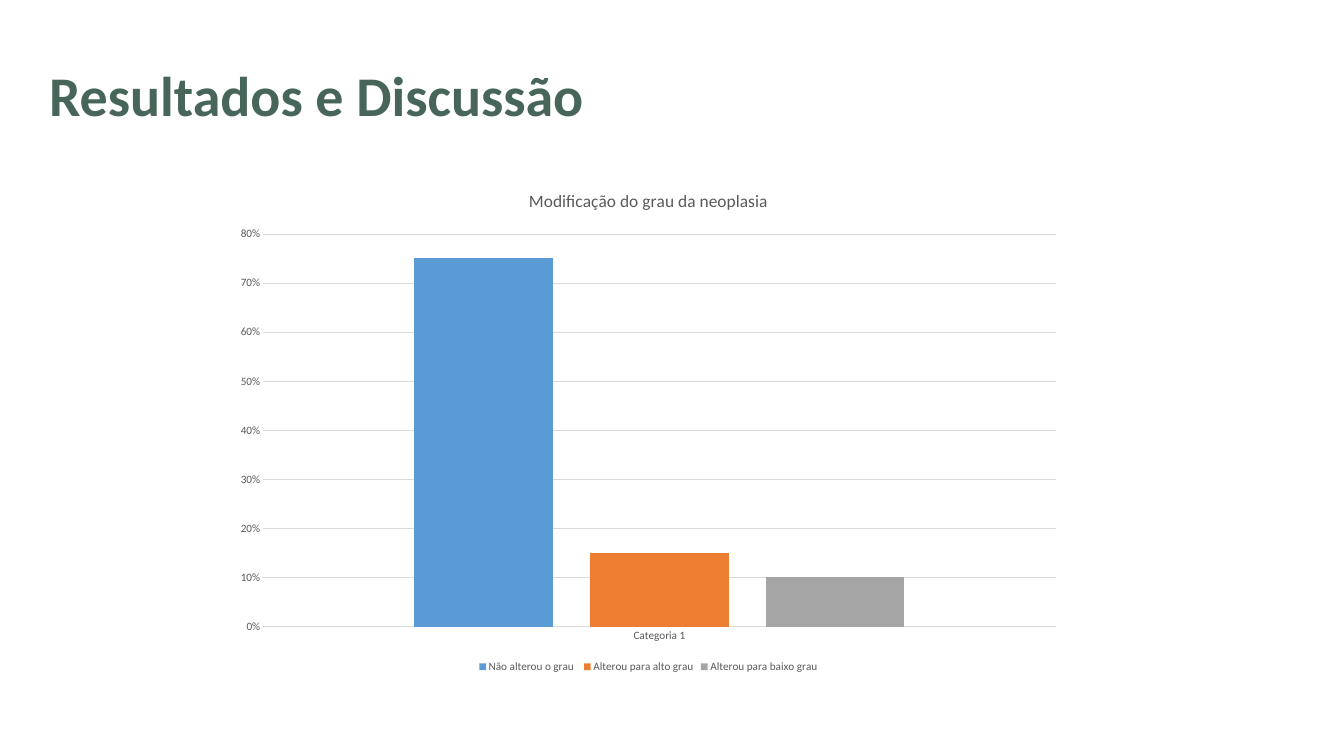
from pptx import Presentation
from pptx import util as u
from pptx.chart.data import CategoryChartData
from pptx.dml.color import RGBColor
from pptx.enum import chart as ch, text

HUES = {"title": "476559", "text": "595959", "grid": "D9D9D9",
        "same": "5B9BD5", "high": "ED7D31", "low": "A5A5A5"}
GRADES = [("Não alterou o grau ", 0.75, "same"),
          ("Alterou para alto grau", 0.15, "high"),
          ("Alterou para baixo grau", 0.1, "low")]


class Deck:
    face = "Calibri"

    def __init__(self, wide, high):
        self.pres = Presentation()
        self.pres.slide_width, self.pres.slide_height = u.Cm(wide), u.Cm(high)
        self.slide = None

    def page(self):
        self.slide = self.pres.slides.add_slide(self.pres.slide_layouts[0])
        sub = self.slide.placeholders[1].element
        sub.getparent().remove(sub)

    def hue(self, name):
        return RGBColor.from_string(HUES[name])

    def style(self, font, size, hue, bold=False):
        font.name, font.size, font.bold = self.face, u.Pt(size), bold
        font.color.rgb = self.hue(hue)

    def rule(self, line):
        line.color.rgb = self.hue("grid")
        line.width = u.Pt(0.75)

    def title(self, words, box):
        head = self.slide.shapes.title
        head.left, head.top, head.width, head.height = map(u.Cm, box)
        frame = head.text_frame
        frame.text = words
        frame.word_wrap = True
        frame.auto_size = text.MSO_AUTO_SIZE.NONE
        frame.vertical_anchor = text.MSO_ANCHOR.TOP
        para = frame.paragraphs[0]
        para.alignment = text.PP_ALIGN.LEFT
        para.line_spacing = u.Pt(92)
        self.style(para.runs[0].font, 60, "title", True)

    def bars(self, name, group, rows, box):
        data = CategoryChartData(number_format="0%")
        data.categories = [group]
        for label, value, _ in rows:
            data.add_series(label, [value])
        chart = self.slide.shapes.add_chart(
            ch.XL_CHART_TYPE.COLUMN_CLUSTERED, *map(u.Cm, box), data).chart
        self.style(chart.font, 12, "text")

        chart.has_title = True
        frame = chart.chart_title.text_frame
        frame.text = name
        self.style(frame.paragraphs[0].runs[0].font, 18.6, "text")
        chart.chart_title.include_in_layout = False

        chart.has_legend = True
        chart.legend.position = ch.XL_LEGEND_POSITION.BOTTOM
        chart.legend.include_in_layout = False
        self.style(chart.legend.font, 12, "text")

        for axis in (chart.category_axis, chart.value_axis):
            axis.major_tick_mark = axis.minor_tick_mark = ch.XL_TICK_MARK.NONE
            self.style(axis.tick_labels.font, 12, "text")
        self.rule(chart.category_axis.format.line)
        scale = chart.value_axis
        scale.format.line.fill.background()
        self.rule(scale.major_gridlines.format.line)
        scale.minimum_scale, scale.maximum_scale, scale.major_unit = 0, 0.8, 0.1
        scale.tick_labels.number_format = "0%"
        scale.tick_labels.number_format_is_linked = False

        plot = chart.plots[0]
        plot.gap_width, plot.overlap = 219, -27
        plot.vary_by_categories = False
        for series, (_, _, hue) in zip(plot.series, rows):
            series.format.fill.solid()
            series.format.fill.fore_color.rgb = self.hue(hue)


def main():
    deck = Deck(50.8, 28.58)
    deck.page()
    deck.title("Resultados e Discussão", (1.6, 1.45, 32.4, 3.38))
    deck.bars("Modificação do grau da neoplasia", "Categoria 1", GRADES,
              (8.46, 6.48, 32.1, 19.08))
    deck.pres.save("out.pptx")


if __name__ == "__main__":
    main()
